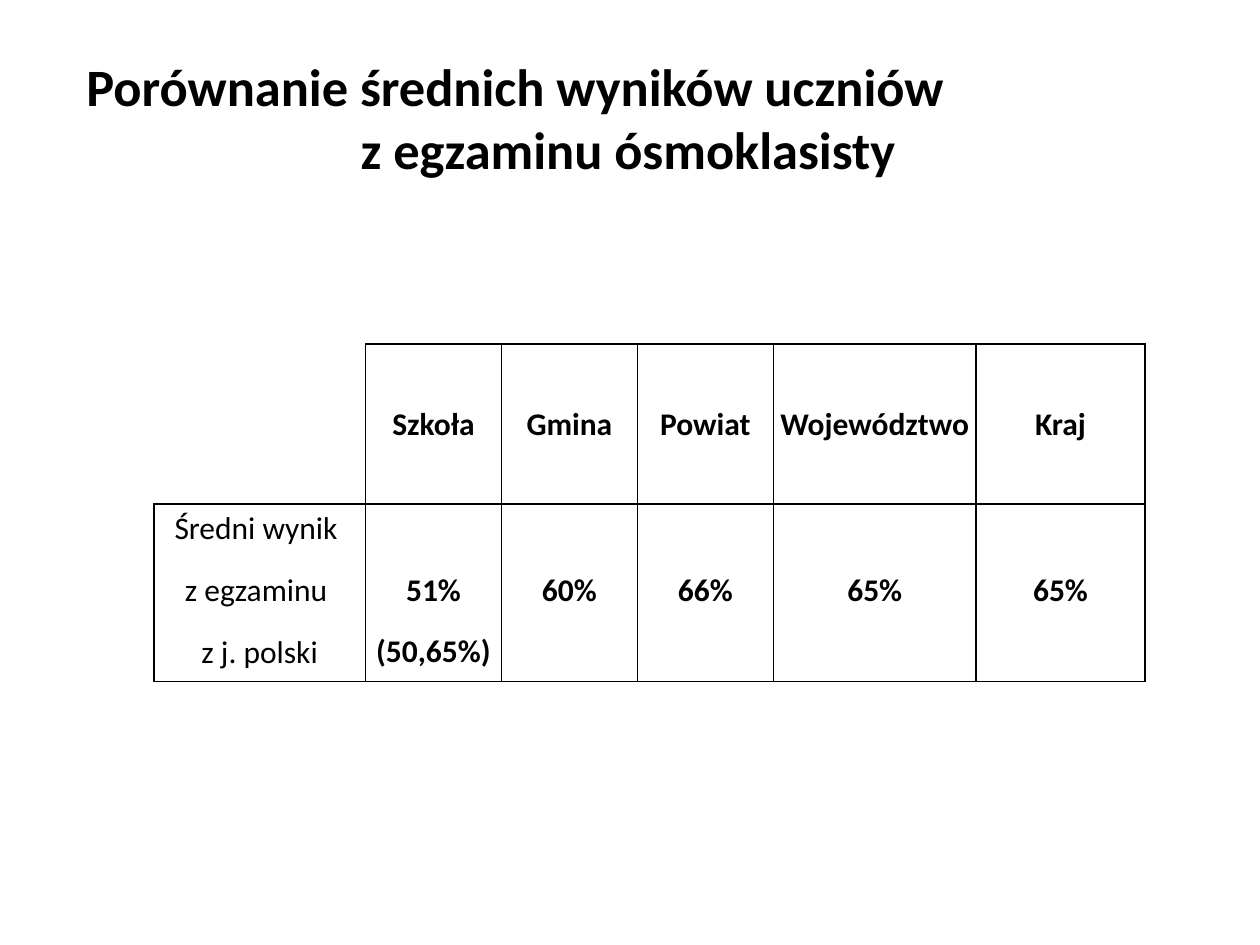
from dataclasses import dataclass

from lxml.etree import SubElement
from pptx import Presentation
from pptx.dml.color import RGBColor
from pptx.enum.text import MSO_ANCHOR, PP_ALIGN
from pptx.oxml.ns import qn
from pptx.slide import Slide
from pptx.table import _Cell
from pptx.text.text import TextFrame
from pptx.util import Cm, Length, Pt


@dataclass(frozen=True)
class Theme:
    font: str = "Calibri"
    ink: str = "000000"
    title_size: Length = Pt(30)
    table_size: Length = Pt(18)
    border: Length = Pt(1)
    line_spacing: float = 1.15
    space_after: Length = Pt(10)


@dataclass(frozen=True)
class CellContent:
    lines: tuple[str, ...] = ()
    top: Length = Cm(0)
    bold: bool = True
    sides: str = "LRTB"


THEME = Theme()
COLUMN_WIDTHS = [Cm(width) for width in (4.27, 2.74, 2.74, 2.74, 4.09, 3.4)]
ROW_HEIGHTS = [Cm(3.23), Cm(3.58)]
HEADINGS = ("Szkoła", "Gmina", "Powiat", "Województwo", "Kraj")
RESULTS = (("51%", "(50,65%)"), ("60%",), ("66%",), ("65%",), ("65%",))
ROWS = (
    [CellContent(sides="RB")]
    + [CellContent((heading,), top=Cm(1.13)) for heading in HEADINGS],
    [CellContent(("Średni wynik ", "z egzaminu ", "z j. polski"), bold=False)]
    + [CellContent(result, top=Cm(1.24)) for result in RESULTS],
)


def write_text(frame: TextFrame, lines: tuple[str, ...], *, size: Length, bold: bool,
               align: PP_ALIGN, line_spacing: float = 1.0,
               space_after: Length = Pt(0)) -> None:
    frame.word_wrap = True
    for index, line in enumerate(lines):
        paragraph = frame.add_paragraph() if index else frame.paragraphs[0]
        paragraph.text = line
        paragraph.alignment = align
        paragraph.line_spacing = line_spacing
        paragraph.space_after = space_after
        for run in paragraph.runs:
            run.font.name = THEME.font
            run.font.size = size
            run.font.bold = bold
            run.font.color.rgb = RGBColor.from_string(THEME.ink)


def draw_borders(cell: _Cell, sides: str) -> None:
    properties = cell._tc.get_or_add_tcPr()
    for side in "LRTB":
        line = SubElement(properties, qn(f"a:ln{side}"), w=str(THEME.border))
        if side in sides:
            fill = SubElement(line, qn("a:solidFill"))
            SubElement(fill, qn("a:srgbClr"), val=THEME.ink)
        else:
            SubElement(line, qn("a:noFill"))


def fill_cell(cell: _Cell, content: CellContent) -> None:
    draw_borders(cell, content.sides)
    cell.fill.background()
    cell.margin_left = cell.margin_right = Cm(0.12)
    cell.margin_top, cell.margin_bottom = content.top, Cm(0)
    cell.vertical_anchor = MSO_ANCHOR.TOP
    write_text(cell.text_frame, content.lines, size=THEME.table_size,
               bold=content.bold, align=PP_ALIGN.CENTER,
               line_spacing=THEME.line_spacing, space_after=THEME.space_after)


def add_title(slide: Slide) -> None:
    frame = slide.shapes.add_textbox(Cm(1.27), Cm(0.76), Cm(22.86), Cm(3.18)).text_frame
    frame.vertical_anchor = MSO_ANCHOR.MIDDLE
    write_text(frame, ("Porównanie średnich wyników uczniów\vz egzaminu ósmoklasisty",),
               size=THEME.title_size, bold=True, align=PP_ALIGN.LEFT)
    properties = frame.paragraphs[0]._p.get_or_add_pPr()
    properties.set("marL", str(Cm(5.75)))
    properties.set("indent", str(Cm(-5.53)))


def add_results_table(slide: Slide) -> None:
    table = slide.shapes.add_table(
        len(ROWS), len(COLUMN_WIDTHS), Cm(3.1), Cm(6.93),
        Length(sum(COLUMN_WIDTHS)), Length(sum(ROW_HEIGHTS))).table
    table.first_row = table.horz_banding = False
    for column, width in zip(table.columns, COLUMN_WIDTHS):
        column.width = width
    for row, height, contents in zip(table.rows, ROW_HEIGHTS, ROWS):
        row.height = height
        for cell, content in zip(row.cells, contents):
            fill_cell(cell, content)


def main() -> None:
    """Build the slide comparing average exam results."""
    presentation = Presentation()
    presentation.slide_width, presentation.slide_height = Cm(25.4), Cm(19.05)
    slide = presentation.slides.add_slide(presentation.slide_layouts[6])
    add_title(slide)
    add_results_table(slide)
    presentation.save("out.pptx")


if __name__ == "__main__":
    main()
